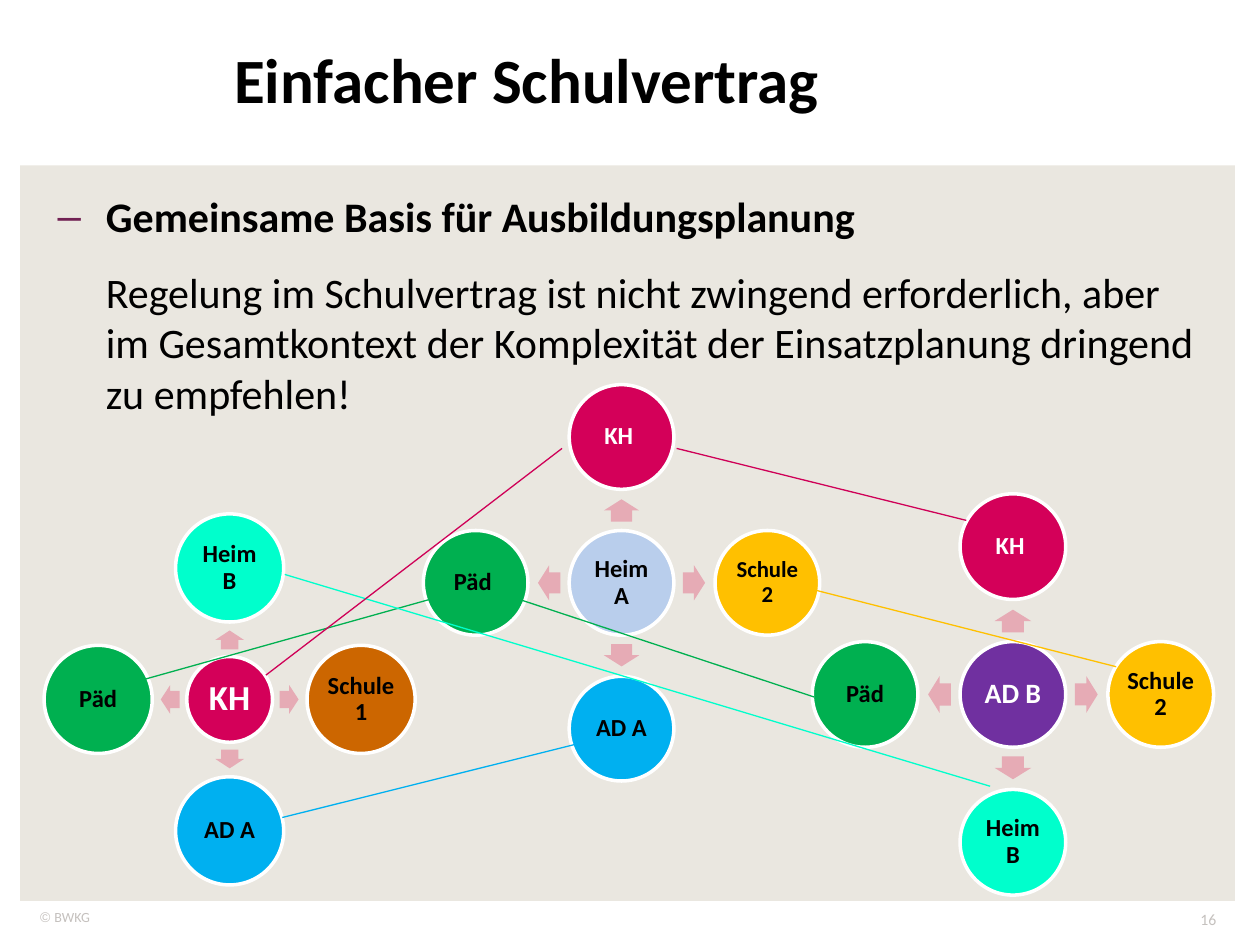
from lxml import etree
from pptx import Presentation
from pptx.dml.color import RGBColor
from pptx.enum import shapes, text
from pptx.oxml import ns
from pptx.util import Cm, Pt

BLACK = RGBColor(0x00, 0x00, 0x00)
WHITE = RGBColor(0xFF, 0xFF, 0xFF)
SAND = RGBColor(0xEA, 0xE7, 0xE0)
GREY = RGBColor(0xC5, 0xC1, 0xBE)
PINK = RGBColor(0xD4, 0x00, 0x59)
ROSE = RGBColor(0xCF, 0x00, 0x57)
BLUSH = RGBColor(0xE6, 0xAB, 0xB5)
MINT = RGBColor(0x00, 0xFF, 0xCC)
BROWN = RGBColor(0xCC, 0x66, 0x00)
BLUE = RGBColor(0x00, 0xB0, 0xF0)
GREEN = RGBColor(0x00, 0xB0, 0x50)
PALE = RGBColor(0xB9, 0xCE, 0xEC)
GOLD = RGBColor(0xFF, 0xC0, 0x00)
PLUM = RGBColor(0x70, 0x30, 0xA0)
KIND = shapes.MSO_SHAPE
ALIGN = text.PP_ALIGN
ANCHOR = text.MSO_ANCHOR


def write(para, words, size, color, align=ALIGN.LEFT, bold=False, name="Calibri"):
    para.alignment = align
    run = para.add_run()
    run.text = words
    run.font.color.rgb = color
    form = {"size": Pt(size), "bold": bold, "name": name}
    for key, value in form.items():
        setattr(run.font, key, value)


def draw(kind, x, y, wide, high, fill):
    """Add a plain filled shape centred on x, y (in cm)."""
    shape = slide.shapes.add_shape(
        kind, Cm(x - wide / 2), Cm(y - high / 2), Cm(wide), Cm(high))
    shape.shadow.inherit = False
    shape.fill.solid()
    shape.fill.fore_color.rgb = fill
    shape.line.fill.background()
    return shape


deck = Presentation()
deck.slide_width, deck.slide_height = Cm(25.4), Cm(19.05)
slide = deck.slides.add_slide(deck.slide_layouts[1])
title, body = slide.placeholders

# Title and body frames
frames = [(title, 0.53, 0.69, 20.17, 2.31), (body, 0.91, 3.71, 23.75, 15.54)]
for frame, left, top, wide, high in frames:
    place = {"left": Cm(left), "top": Cm(top), "width": Cm(wide), "height": Cm(high)}
    for key, value in place.items():
        setattr(frame, key, value)
    frame.text_frame.auto_size = text.MSO_AUTO_SIZE.NONE
    frame.text_frame.vertical_anchor = ANCHOR.TOP

# Panel behind the text
panel = draw(KIND.RECTANGLE, 12.65, 10.75, 24.49, 14.83, SAND)
title._element.addprevious(panel._element)

write(title.text_frame.paragraphs[0], "Einfacher Schulvertrag", 36, BLACK, ALIGN.CENTER, True)

# Body: dashed heading, then a plain paragraph
head = body.text_frame.paragraphs[0]
plain = body.text_frame.add_paragraph()
for para, hang, space in ((head, -0.97, 0), (plain, 0, 14.6)):
    para.space_before = Pt(space)
    props = para._p.get_or_add_pPr()
    props.set("marL", str(Cm(0.97)))
    props.set("indent", str(Cm(hang)))
    if para is head:
        tint = etree.SubElement(props, ns.qn("a:buClr"))
        etree.SubElement(tint, ns.qn("a:srgbClr"), val="712153")
        etree.SubElement(props, ns.qn("a:buFont"), typeface="Arial")
        etree.SubElement(props, ns.qn("a:buChar"), char="–")
    else:
        etree.SubElement(props, ns.qn("a:buNone"))
write(head, "Gemeinsame Basis für Ausbildungsplanung", 24, BLACK, bold=True)
write(plain, "Regelung im Schulvertrag ist nicht zwingend erforderlich, aber im "
      "Gesamtkontext der Komplexität der Einsatzplanung dringend zu empfehlen!", 24, BLACK)

# Footer
foot = slide.shapes.add_textbox(Cm(0.56), Cm(18.19), Cm(1.63), Cm(0.58))
para = foot.text_frame.paragraphs[0]
write(para, "© ", 8, GREY, ALIGN.JUSTIFY, name="Arial")
write(para, "BWKG", 8, GREY, ALIGN.JUSTIFY)
page = slide.shapes.add_textbox(Cm(18.85), Cm(18.21), Cm(5.92), Cm(0.84))
write(page.text_frame.paragraphs[0], "16", 9, GREY, ALIGN.RIGHT)

# Stars: centre x, y, hub size, disc size, reach of discs and arrows,
# arrow size, then hub, top, right, bottom and left discs
stars = [
    (4.63, 14.1, 1.73, 2.18, 2.65, 1.2, 0.38, 0.58,
     [("KH", PINK, WHITE, 20), ("Heim B", MINT, BLACK, 14), ("Schule 1", BROWN, BLACK, 14),
      ("AD A", BLUE, BLACK, 14), ("Päd", GREEN, BLACK, 14)]),
    (12.53, 11.75, 2.11, 2.11, 2.94, 1.46, 0.45, 0.71,
     [("Heim A", PALE, BLACK, 14), ("KH ", PINK, WHITE, 14), ("Schule 2", GOLD, BLACK, 13),
      ("AD A", BLUE, BLACK, 14), ("Päd ", GREEN, BLACK, 14)]),
    (20.42, 14.0, 2.13, 2.13, 2.98, 1.48, 0.46, 0.74,
     [("AD B", PLUM, WHITE, 16), ("KH ", PINK, WHITE, 14), ("Schule 2", GOLD, BLACK, 14),
      ("Heim B", MINT, BLACK, 14), ("Päd", GREEN, BLACK, 14)]),
]
ways = [(0, 0, None), (0, -1, 270), (1, 0, 0), (0, 1, 90), (-1, 0, 180)]
for x, y, hub, size, reach, step, long, high, discs in stars:
    for (dx, dy, turn), (words, fill, ink, points) in zip(ways, discs):
        wide = hub if turn is None else size
        if turn is not None:
            arrow = draw(KIND.RIGHT_ARROW, x + dx * step, y + dy * step, long, high, BLUSH)
            arrow.rotation = turn
            arrow.adjustments[0], arrow.adjustments[1] = 0.6, 0.5
        disc = draw(KIND.OVAL, x + dx * reach, y + dy * reach, wide, wide, fill)
        disc.line.color.rgb = WHITE
        disc.line.width = Pt(2)
        frame = disc.text_frame
        form = {"word_wrap": True, "vertical_anchor": ANCHOR.MIDDLE}
        for side in ("left", "top", "right", "bottom"):
            form["margin_" + side] = Cm(0.05)
        for key, value in form.items():
            setattr(frame, key, value)
        frame.paragraphs[0].line_spacing = 0.9
        write(frame.paragraphs[0], words, points, ink, ALIGN.CENTER, True)

# Links between matching partners
links = [
    (5.69, 16.48, 11.58, 15.01, BLUE),
    (2.82, 13.72, 8.64, 12.09, GREEN),
    (10.49, 12.09, 16.41, 14.05, GREEN),
    (5.74, 11.58, 19.96, 15.85, MINT),
    (5.36, 13.61, 11.33, 9.04, ROSE),
    (13.64, 9.04, 19.48, 10.49, ROSE),
    (16.41, 11.89, 22.5, 13.44, GOLD),
]
for *ends, color in links:
    link = slide.shapes.add_connector(shapes.MSO_CONNECTOR.STRAIGHT, *map(Cm, ends))
    link.line.color.rgb = color
    link.line.width = Pt(0.75)
    etree.SubElement(link._element.spPr, ns.qn("a:effectLst"))

deck.save("out.pptx")
